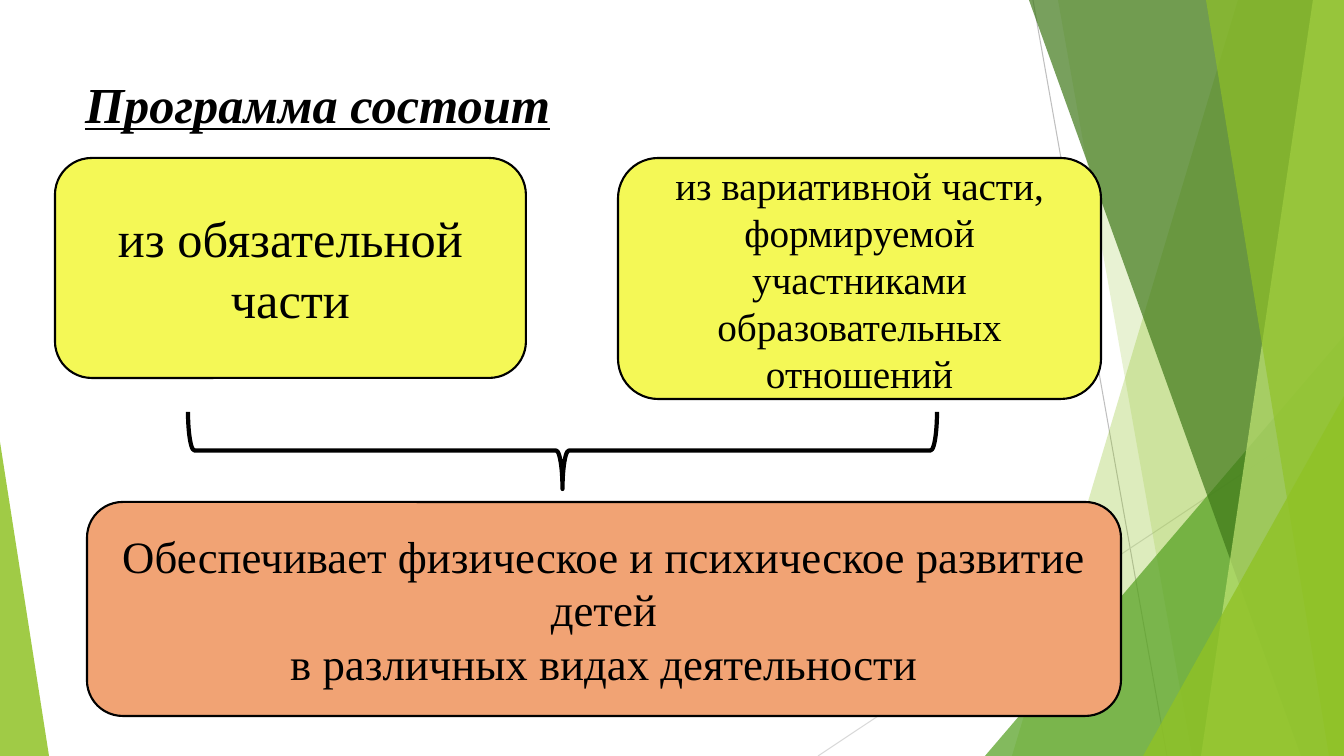
from lxml.etree import SubElement
from pptx import Presentation
from pptx.dml.color import RGBColor
from pptx.enum.shapes import MSO_CONNECTOR, MSO_SHAPE
from pptx.enum.text import MSO_ANCHOR, MSO_AUTO_SIZE, PP_ALIGN
from pptx.oxml.ns import qn
from pptx.util import Emu, Pt

SCALE = 914400 / 100.8
WIDE, HIGH = 1344, 756
FONT = "Times New Roman"
BLACK = RGBColor(0x00, 0x00, 0x00)
YELLOW = RGBColor(0xF4, 0xF8, 0x56)
ORANGE = RGBColor(0xF1, 0xA3, 0x74)
LIME = RGBColor(0x90, 0xC2, 0x26)
PALE = RGBColor(0xC0, 0xE4, 0x74)
GREEN = RGBColor(0x54, 0xA0, 0x21)
DARK = RGBColor(0x3F, 0x78, 0x19)
GREY = RGBColor(0xBF, 0xBF, 0xBF)
SILVER = RGBColor(0xD9, 0xD9, 0xD9)


def px(*values):
    return [Emu(round(value * SCALE)) for value in values]


def paint(shape, color, alpha):
    shape.shadow.inherit = False
    shape.line.fill.background()
    shape.fill.solid()
    shape.fill.fore_color.rgb = color
    tone = shape.fill._xPr.find(".//" + qn("a:srgbClr"))
    SubElement(tone, qn("a:alpha")).set("val", str(alpha * 1000))


deck = Presentation()
deck.slide_width, deck.slide_height = px(WIDE, HIGH)
slide = deck.slides.add_slide(deck.slide_layouts[5])
shapes = slide.shapes

# Thin lines behind the facets
for ends, color in [((1033, 0, 1167, HIGH), GREY), ((WIDE, 406, 818, HIGH), SILVER)]:
    line = shapes.add_connector(MSO_CONNECTOR.STRAIGHT, *px(*ends))
    line.line.color.rgb = color
    line.line.width = Pt(0.75)
    SubElement(line._element.spPr, qn("a:effectLst"))

# Green facets: bands reach the right edge, triangles rise from the bottom
facets = [
    ("band", 1238, 1012, LIME, 30),
    ("band", 1058, 1192, LIME, 20),
    ("peak", (985, 336, 359, 420), 1, GREEN, 72),
    ("band", 1029, 1301, DARK, 70),
    ("band", 1313, 1201, PALE, 70),
    ("band", 1206, 1329, LIME, 65),
    ("peak", (1143, 396, 201, 360), 1, LIME, 80),
    ("peak", (0, 442, 49, 314), 0, LIME, 85),
]
for kind, first, second, color, alpha in facets:
    if kind == "band":
        outline = shapes.build_freeform(first, 0, scale=SCALE)
        outline.add_line_segments([(WIDE, 0), (WIDE, HIGH), (second, HIGH)], close=True)
        facet = outline.convert_to_shape()
    else:
        facet = shapes.add_shape(MSO_SHAPE.ISOSCELES_TRIANGLE, *px(*first))
        facet.adjustments[0] = second
    paint(facet, color, alpha)

# Title
title = shapes.title
title.left, title.top, title.width, title.height = px(75, 68, 947, 145)
frame = title.text_frame
frame.text = "Программа состоит"
frame.auto_size = MSO_AUTO_SIZE.NONE
frame.vertical_anchor = MSO_ANCHOR.TOP
frame.paragraphs[0].alignment = PP_ALIGN.LEFT
font = frame.paragraphs[0].runs[0].font
font.name, font.size, font.color.rgb = FONT, Pt(36), BLACK
font.bold = font.italic = font.underline = True

# Rounded boxes
boxes = [
    ((55, 158, 471, 220), YELLOW, 36, "из обязательной\nчасти"),
    ((618, 158, 483, 241), YELLOW, 28,
     "из вариативной части,\nформируемой\nучастниками\nобразовательных\nотношений"),
    ((87, 502, 1034, 214), ORANGE, 32,
     "Обеспечивает физическое и психическое развитие детей\n"
     "в различных видах деятельности"),
]
for place, color, size, text in boxes:
    box = shapes.add_shape(MSO_SHAPE.ROUNDED_RECTANGLE, *px(*place))
    box.shadow.inherit = False
    box.fill.solid()
    box.fill.fore_color.rgb = color
    box.line.color.rgb = BLACK
    box.line.width = Pt(1.5)
    frame = box.text_frame
    frame.text = text
    frame.word_wrap = True
    frame.vertical_anchor = MSO_ANCHOR.MIDDLE
    for para in frame.paragraphs:
        para.alignment = PP_ALIGN.CENTER
        font = para.runs[0].font
        font.name, font.size, font.color.rgb = FONT, Pt(size), BLACK

# Brace joining the two parts
brace = shapes.add_shape(MSO_SHAPE.RIGHT_BRACE, *px(524, 76, 77, 749))
brace.rotation = 90
brace.shadow.inherit = False
brace.fill.background()
brace.line.color.rgb = BLACK
brace.line.width = Pt(3)

deck.save("out.pptx")
